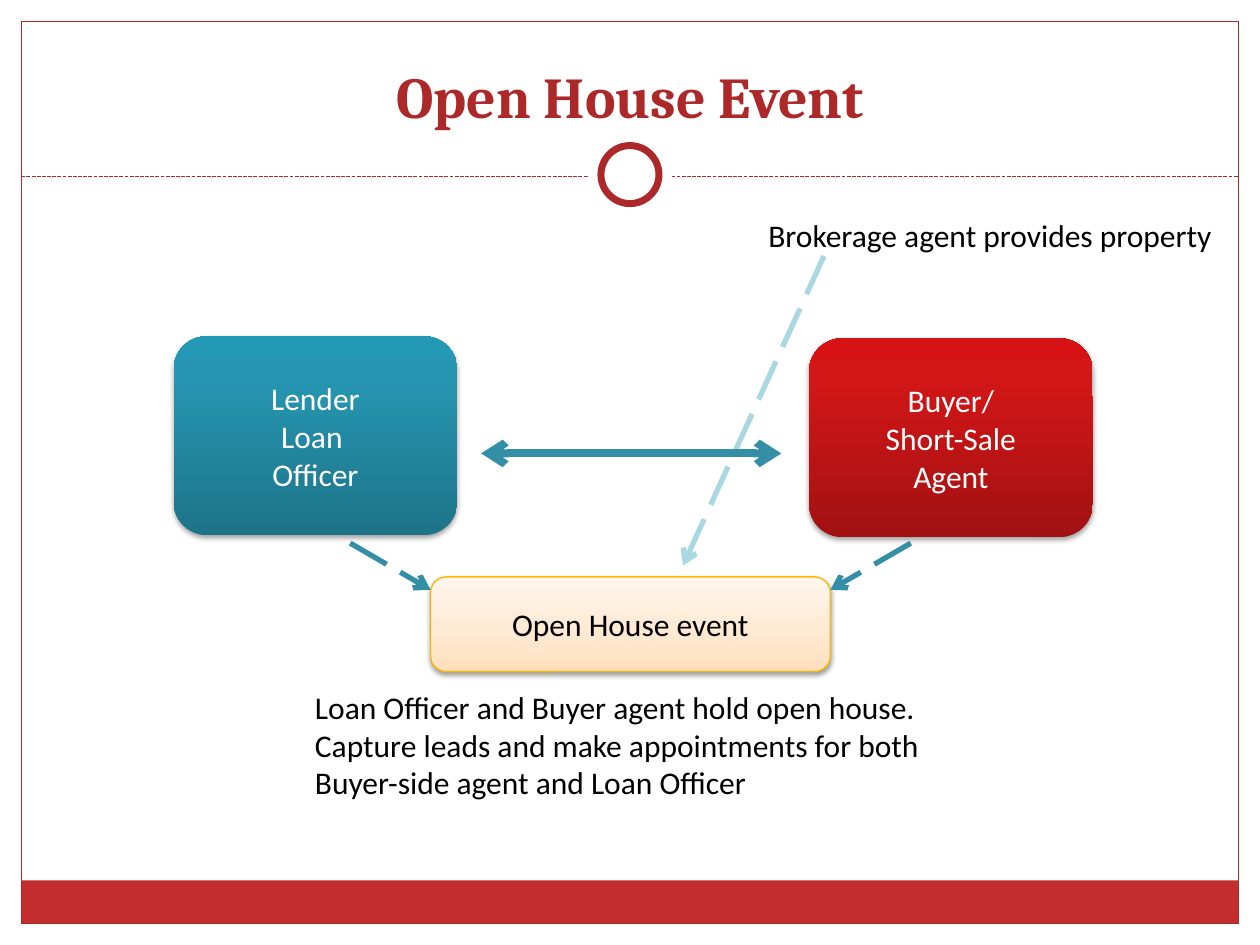
from dataclasses import dataclass

from lxml import etree
from pptx import Presentation
from pptx import util as u
from pptx.dml import color
from pptx.enum import dml, shapes, text
from pptx.oxml import ns


@dataclass(frozen=True)
class Theme:
    heading_font: str = "Cambria"
    body_font: str = "Calibri"
    title_size: int = 33
    body_size: int = 18
    red: str = "AC2829"
    band: str = "C32D2E"
    white: str = "FFFFFF"
    black: str = "000000"
    teal: str = "348FA6"
    pale_teal: str = "A9D7E2"
    gold: str = "FEB604"
    red_gradient: tuple = ((0, "A21112"), (80, "D31617"), (100, "D71214"))
    teal_gradient: tuple = ((0, "1D7489"), (80, "2696B2"), (100, "2499B5"))
    cream_gradient: tuple = ((0, "FFDFBC"), (35, "FFE8D0"), (100, "FFF6ED"))


@dataclass(frozen=True)
class Box:
    """A region in centimetres."""
    left: float
    top: float
    width: float
    height: float

    def inner(self, left, top, width, height):
        return Box(self.left + left, self.top + top, width, height)

    def lengths(self):
        return [u.Cm(v) for v in (self.left, self.top, self.width, self.height)]


THEME = Theme()
Shape = shapes.MSO_SHAPE
Dash = dml.MSO_LINE


def rgb(value):
    return color.RGBColor.from_string(value)


def set_format(target, **values):
    for name, value in values.items():
        setattr(target, name, value)


def add_child(parent, tag, **attributes):
    child = etree.SubElement(parent, ns.qn(tag))
    for name, value in attributes.items():
        child.set(name, str(value))
    return child


def write_text(shape, lines, ink=THEME.black, font=THEME.body_font,
               size=THEME.body_size, bold=False, align=None, **frame_format):
    frame = shape.text_frame
    set_format(frame, **frame_format)
    paragraph = frame.paragraphs[0]
    paragraph.alignment = align
    for index, line in enumerate(lines):
        if index:
            paragraph.add_line_break()
        run = paragraph.add_run()
        run.text = line
        set_format(run.font, name=font, size=u.Pt(size), bold=bold)
        run.font.color.rgb = rgb(ink)


def add_plain_shape(slide, kind, box, fill=None, line=None, width=0.75):
    shape = slide.shapes.add_shape(kind, *box.lengths())
    shape.shadow.inherit = False
    if fill:
        shape.fill.solid()
        shape.fill.fore_color.rgb = rgb(fill)
    else:
        shape.fill.background()
    if line:
        shape.line.color.rgb = rgb(line)
        shape.line.width = u.Pt(width)
    else:
        shape.line.fill.background()
    return shape


def add_card(slide, box, lines, stops, ink=THEME.white, line=None, opacity=35):
    """Rounded card with an upward gradient and a soft shadow."""
    shape = add_plain_shape(slide, Shape.ROUNDED_RECTANGLE, box, line=line)
    shape.fill.gradient()
    shape.fill.gradient_angle = 90
    properties = shape._element.spPr
    stop_list = properties.find(".//" + ns.qn("a:gsLst"))
    for stop in list(stop_list):
        stop_list.remove(stop)
    for position, value in stops:
        stop = add_child(stop_list, "a:gs", pos=position * 1000)
        add_child(stop, "a:srgbClr", val=value)
    shadow = add_child(properties.find(ns.qn("a:effectLst")), "a:outerShdw",
                       blurRad=u.Pt(3.1), dist=u.Pt(1.8), dir=5400000, rotWithShape=0)
    shade = add_child(shadow, "a:srgbClr", val=THEME.black)
    add_child(shade, "a:alpha", val=opacity * 1000)
    write_text(shape, lines, ink, align=text.PP_ALIGN.CENTER,
               vertical_anchor=text.MSO_ANCHOR.MIDDLE)


def add_line(slide, box, start, end, ink, width, dash=None, arrows=()):
    """Line between two points of the box; arrows names its arrowhead ends."""
    points = [u.Cm(v) for x, y in (start, end) for v in (box.left + x, box.top + y)]
    connector = slide.shapes.add_connector(shapes.MSO_CONNECTOR.STRAIGHT, *points)
    connector.line.color.rgb = rgb(ink)
    set_format(connector.line, width=u.Pt(width), dash_style=dash)
    properties = connector._element.spPr
    outline = properties.find(ns.qn("a:ln"))
    for end_tag in arrows:
        add_child(outline, end_tag, type="arrow")
    add_child(properties, "a:effectLst")


def add_note(slide, box, lines):
    note = slide.shapes.add_textbox(*box.lengths())
    write_text(note, lines, word_wrap=False,
               auto_size=text.MSO_AUTO_SIZE.SHAPE_TO_FIT_TEXT)


def add_frame(slide, box):
    """Border, bottom band and ringed divider."""
    band_height, divider, ring_centre = 0.87, 3.13, 3.09
    add_plain_shape(slide, Shape.RECTANGLE,
                    box.inner(0, box.height - band_height, box.width, band_height),
                    fill=THEME.band)
    add_plain_shape(slide, Shape.RECTANGLE, box, line=THEME.red)
    add_line(slide, box, (0, divider), (box.width, divider), THEME.red, 0.75,
             Dash.SQUARE_DOT)
    for diameter, line in ((1.7, None), (1.17, THEME.red)):
        ring = box.inner((box.width - diameter) / 2, ring_centre - diameter / 2,
                         diameter, diameter)
        add_plain_shape(slide, Shape.OVAL, ring, THEME.white, line, 4)


def add_title(slide, box, wording):
    title = slide.shapes.title
    left, top, width, height = box.lengths()
    set_format(title, left=left, top=top, width=width, height=height)
    write_text(title, [wording], THEME.red, THEME.heading_font, THEME.title_size,
               bold=True, align=text.PP_ALIGN.CENTER, word_wrap=True,
               vertical_anchor=text.MSO_ANCHOR.BOTTOM)


def add_diagram(slide, box):
    """Two partners and a property source leading to the open house."""
    card_width, card_height = 5.72, 4.01
    tail, head = "a:tailEnd", "a:headEnd"
    add_card(slide, box.inner(box.width - card_width, 2.62, card_width, card_height),
             ["Buyer/", "Short-Sale", "Agent"], THEME.red_gradient)
    add_card(slide, box.inner(0, 2.58, card_width, card_height),
             ["Lender", "Loan ", "Officer"], THEME.teal_gradient)
    add_card(slide, box.inner(5.18, 7.43, 8.06, 1.91), ["Open House event"],
             THEME.cream_gradient, THEME.black, THEME.gold, opacity=38)
    add_line(slide, box, (13.11, 0.96), (10.27, 7.2), THEME.pale_teal, 3,
             Dash.LONG_DASH, [tail])
    for start, end in ((14.86, 13.24), (3.56, 5.18)):
        add_line(slide, box, (start, 6.75), (end, 7.69), THEME.teal, 3,
                 Dash.LONG_DASH, [tail])
    add_line(slide, box, (6.2, 4.94), (12.25, 4.94), THEME.teal, 4.5,
             arrows=[head, tail])
    add_note(slide, box.inner(11.74, 0.04, 9.55, 1.02),
             ["Brokerage agent provides property"])
    add_note(slide, box.inner(2.6, 9.54, 12.98, 2.57),
             ["Loan Officer and Buyer agent hold open house.",
              "Capture leads and make appointments for both ",
              "Buyer-side agent and Loan Officer"])


def main():
    presentation = Presentation()
    set_format(presentation, slide_width=u.Cm(25.4), slide_height=u.Cm(19.05))
    slide = presentation.slides.add_slide(presentation.slide_layouts[5])
    add_frame(slide, Box(0.43, 0.43, 24.54, 18.19))
    add_title(slide, Box(0.85, 0.64, 23.7, 2.11), "Open House Event")
    add_diagram(slide, Box(3.5, 4.2, 18.53, 12.1))
    presentation.save("out.pptx")


if __name__ == "__main__":
    main()
